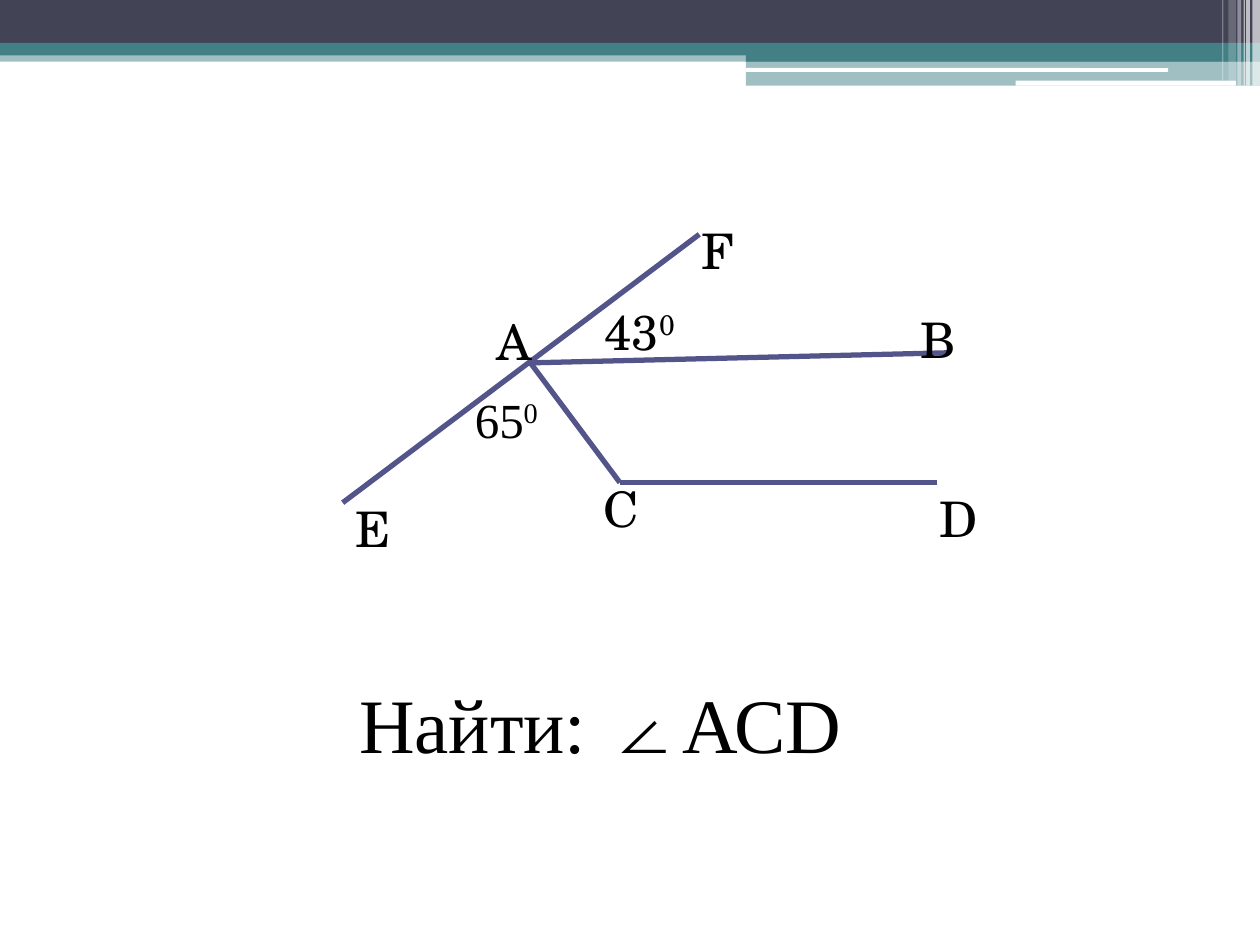
from lxml import etree
from pptx import Presentation
from pptx.dml.color import RGBColor
from pptx.enum import shapes, text
from pptx.oxml.ns import qn
from pptx.util import Inches, Pt

NAVY = RGBColor(0x42, 0x44, 0x56)
TEAL = RGBColor(0x43, 0x80, 0x86)
WHITE = RGBColor(0xFF, 0xFF, 0xFF)
BLACK = RGBColor(0, 0, 0)
INDIGO = RGBColor(0x53, 0x54, 0x8A)
SERIF = "TeX Gyre Schola"
TIMES = "Times New Roman"


def add_bar(slide, left, top, width, height, color, opacity=100, rounded=False):
    kind = shapes.MSO_SHAPE.ROUNDED_RECTANGLE if rounded else shapes.MSO_SHAPE.RECTANGLE
    bar = slide.shapes.add_shape(
        kind, Inches(left), Inches(top), Inches(width), Inches(height))
    bar.shadow.inherit = False
    bar.fill.solid()
    bar.fill.fore_color.rgb = color
    bar.line.fill.background()
    if opacity < 100:
        srgb = bar.fill._xPr.find(qn("a:solidFill")).find(qn("a:srgbClr"))
        etree.SubElement(srgb, qn("a:alpha")).set("val", str(opacity * 1000))


def add_text(slide, left, top, width, height, words, font=SERIF, size=28,
             color=BLACK, superscript="", align=text.PP_ALIGN.LEFT):
    box = slide.shapes.add_textbox(
        Inches(left), Inches(top), Inches(width), Inches(height))
    box.text_frame.word_wrap = True
    paragraph = box.text_frame.paragraphs[0]
    paragraph.alignment = align
    for part in filter(None, (words, superscript)):
        run = paragraph.add_run()
        run.text = part
        run.font.name = font
        run.font.size = Pt(size)
        run.font.color.rgb = color
    if superscript:
        run._r.get_or_add_rPr().set("baseline", "30000")


def add_segment(slide, start, end):
    segment = slide.shapes.add_connector(
        shapes.MSO_CONNECTOR.STRAIGHT, *(Inches(v) for v in (*start, *end)))
    segment.line.color.rgb = INDIGO
    segment.line.width = Pt(3)
    etree.SubElement(segment._element.spPr, qn("a:effectLst"))


def draw_header(slide, left, top, width):
    """Layered bands, with a stepped right part and pale stripes at its end."""
    right = left + width
    step = right - 4.08
    add_bar(slide, left, top + 0.4, width, 0.09, TEAL, 50)
    add_bar(slide, left, top, width, 0.34, NAVY)
    add_bar(slide, left, top + 0.34, width, 0.1, TEAL)
    add_bar(slide, step, top + 0.39, 4.08, 0.1, TEAL)
    add_bar(slide, step, top + 0.48, 4.08, 0.2, TEAL, 50)
    add_bar(slide, step, top + 0.54, 3.35, 0.03, WHITE, rounded=True)
    add_bar(slide, right - 1.94, top + 0.64, 1.75, 0.04, WHITE, rounded=True)

    stripes = [  # distance from the right edge, width, height, opacity
        (0.06, 0.06, 0.68, 65), (0.11, 0.03, 0.68, 65), (0.13, 0.01, 0.68, 60),
        (0.18, 0.03, 0.68, 40), (0.25, 0.06, 0.64, 20), (0.3, 0.01, 0.64, 30),
    ]
    for inset, stripe_width, height, opacity in stripes:
        add_bar(slide, right - inset, top, stripe_width, height, WHITE, opacity)


def draw_angle_figure(slide, left, top):
    vertices = {
        "A": (1.49, 1.18), "B": (4.8, 1.1), "C": (2.2, 2.13),
        "D": (4.72, 2.13), "E": (0, 2.29), "F": (2.83, 0.16),
    }
    points = {name: (left + x, top + y) for name, (x, y) in vertices.items()}
    for start, end in ("AB", "FE", "AC", "CD"):
        add_segment(slide, points[start], points[end])

    angles = [("43", 1.98, 0.64, 1.11, SERIF), ("65", 0.95, 1.34, 1.21, TIMES)]
    for degrees, x, y, width, font in angles:
        add_text(slide, left + x, top + y, width, 0.57, degrees,
                 font=font, superscript="0")

    vertex_labels = [
        ("А", 1.12, 0.72, 0.39), ("В", 4.49, 0.71, 0.47), ("D", 4.64, 2.13, 0.47),
        ("C", 1.97, 2.05, 0.31), ("E", 0, 2.21, 0.31), ("F", 2.75, 0, 0.31),
    ]
    for letter, x, y, width in vertex_labels:
        add_text(slide, left + x, top + y, width, 0.57, letter)


def draw_question(slide, left, top, width, height):
    add_text(slide, left, top, width, height, "Найти: ∠АСD", font=TIMES,
             size=44, align=text.PP_ALIGN.CENTER)


def main():
    deck = Presentation()
    deck.slide_width, deck.slide_height = Inches(10), Inches(7.5)
    slide = deck.slides.add_slide(deck.slide_layouts[6])
    draw_header(slide, 0, 0, 10)
    draw_question(slide, 0.74, 5.32, 8.05, 0.8)
    draw_angle_figure(slide, 2.72, 1.7)
    deck.save("out.pptx")


if __name__ == "__main__":
    main()
